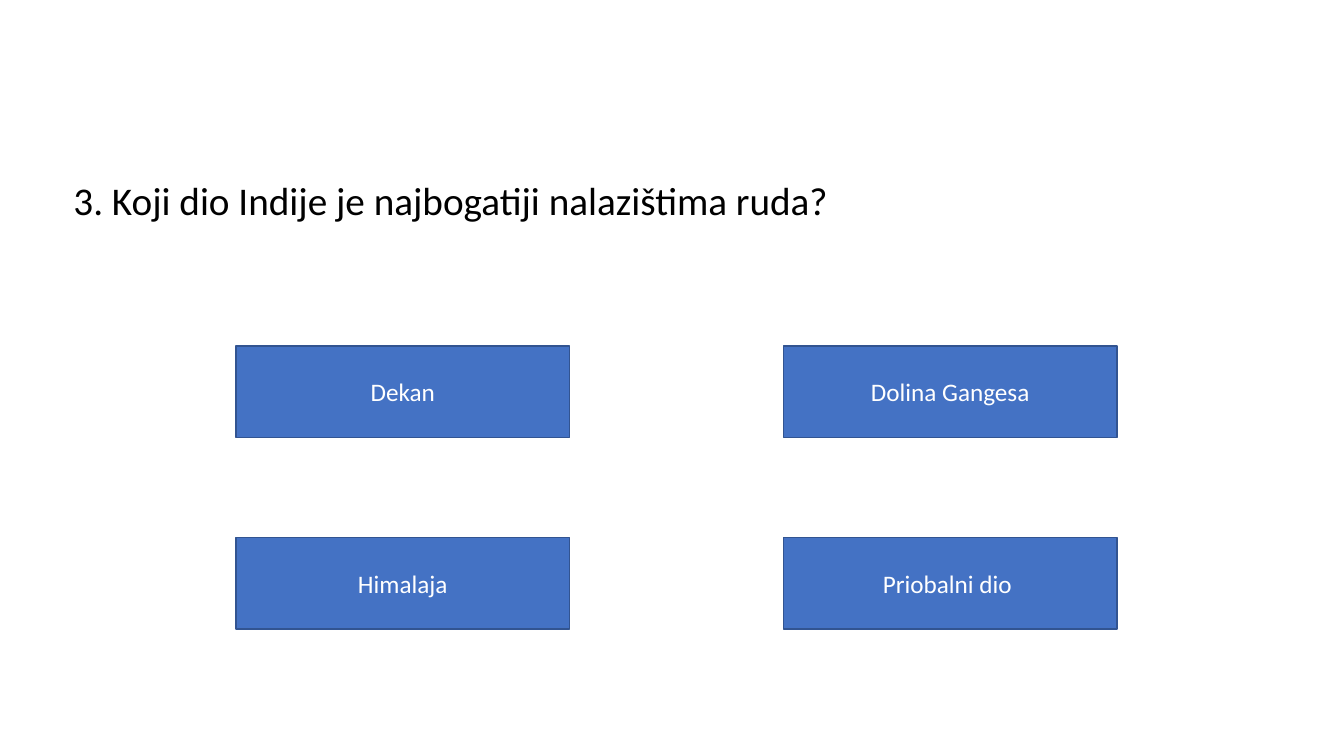
"""Build a quiz slide with one question and four answer boxes."""
from dataclasses import dataclass

from pptx import Presentation
from pptx.dml.color import RGBColor
from pptx.enum.shapes import MSO_SHAPE
from pptx.enum.text import MSO_ANCHOR, MSO_AUTO_SIZE, PP_ALIGN
from pptx.util import Pt

RECTANGLE = MSO_SHAPE.RECTANGLE
MIDDLE = MSO_ANCHOR.MIDDLE
GROW = MSO_AUTO_SIZE.SHAPE_TO_FIT_TEXT
CENTER = PP_ALIGN.CENTER


@dataclass(frozen=True)
class Theme:
    """Colours, font and type sizes of the slide."""
    font: str = "Calibri"
    question_size: int = 28
    answer_size: int = 18
    question_color: str = "000000"
    answer_color: str = "FFFFFF"
    box_fill: str = "4472C4"
    box_line: str = "325491"


THEME = Theme()
QUESTION = "3. Koji dio Indije je najbogatiji nalazištima ruda?"
ANSWERS = (("Dekan", "Dolina Gangesa"), ("Himalaja", "Priobalni dio "))
GRID_LEFT, GRID_TOP = 168.5, 247
COLUMN_STEP, ROW_STEP = 391, 136.8
BOX_WIDTH, BOX_HEIGHT = 238.5, 65.5


def add_run(paragraph, text, size, color):
    """Append one styled run to a paragraph."""
    run = paragraph.add_run()
    run.text = text
    run.font.name = THEME.font
    run.font.size = Pt(size)
    run.font.color.rgb = RGBColor.from_string(color)


def add_question(slide, text):
    """Add the question line."""
    question = slide.shapes.add_textbox(Pt(45.4), Pt(122.4), Pt(850.4), Pt(41))
    frame = question.text_frame
    frame.word_wrap = True
    frame.auto_size = GROW
    add_run(frame.paragraphs[0], text, THEME.question_size, THEME.question_color)


def add_answer(slide, text, left, top):
    """Add one answer box."""
    answer = slide.shapes.add_shape(
        RECTANGLE, Pt(left), Pt(top), Pt(BOX_WIDTH), Pt(BOX_HEIGHT))
    answer.shadow.inherit = False
    answer.fill.solid()
    answer.fill.fore_color.rgb = RGBColor.from_string(THEME.box_fill)
    answer.line.color.rgb = RGBColor.from_string(THEME.box_line)
    answer.line.width = Pt(1)
    frame = answer.text_frame
    frame.word_wrap = True
    frame.vertical_anchor = MIDDLE
    paragraph = frame.paragraphs[0]
    paragraph.alignment = CENTER
    add_run(paragraph, text, THEME.answer_size, THEME.answer_color)


def main():
    """Build and save the slide."""
    deck = Presentation()
    deck.slide_width, deck.slide_height = Pt(960), Pt(540)
    slide = deck.slides.add_slide(deck.slide_layouts[6])
    for row, answers in enumerate(ANSWERS):
        for column, text in enumerate(answers):
            add_answer(slide, text, GRID_LEFT + column * COLUMN_STEP,
                       GRID_TOP + row * ROW_STEP)
    add_question(slide, QUESTION)
    deck.save("out.pptx")


if __name__ == "__main__":
    main()
